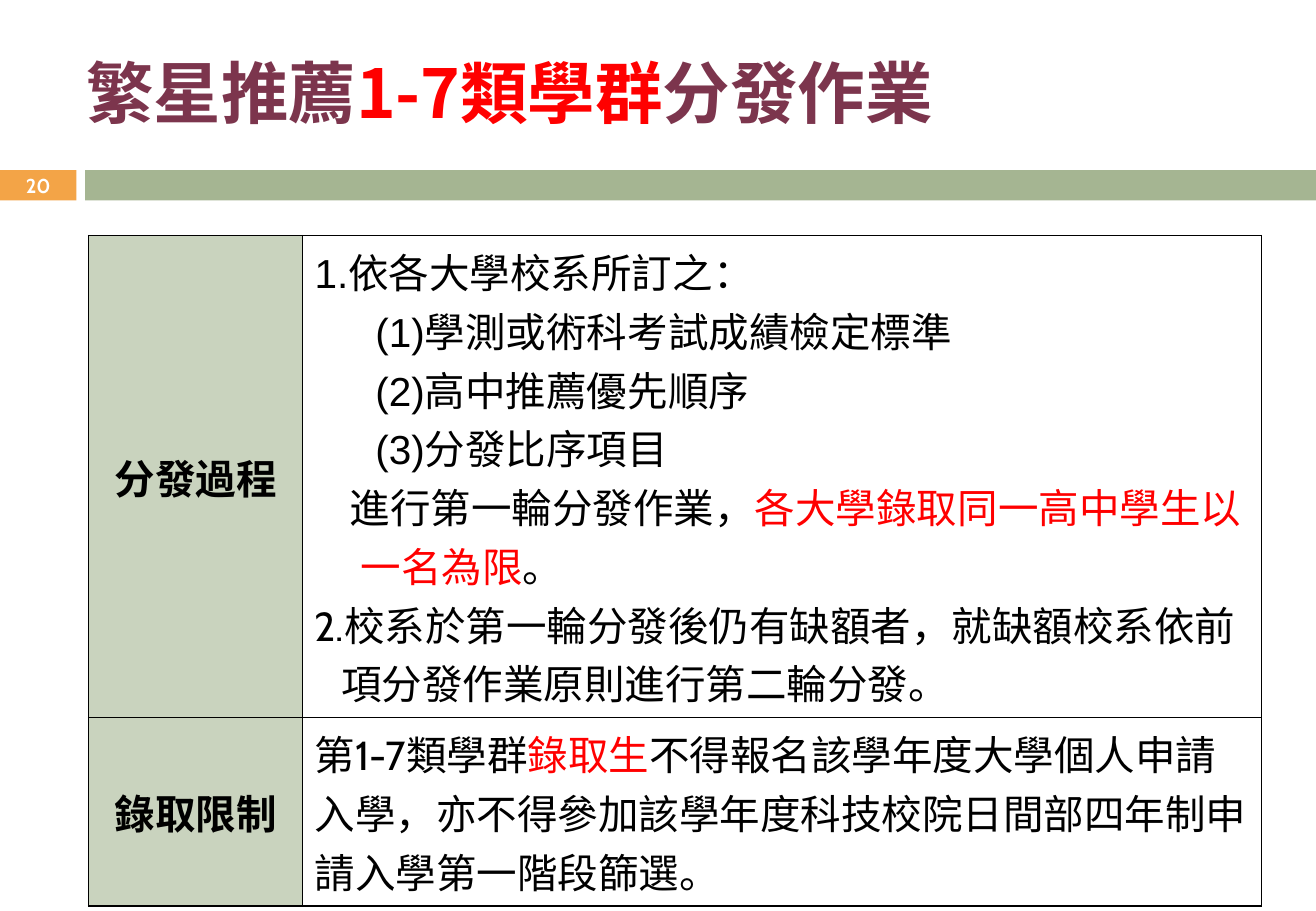
from pptx import Presentation
from pptx.dml.color import RGBColor
from pptx.enum.shapes import MSO_SHAPE
from pptx.enum.text import MSO_ANCHOR, PP_ALIGN
from pptx.oxml.ns import qn
from pptx.util import Inches, Pt
from lxml import etree

RECTANGLE = MSO_SHAPE.RECTANGLE
MIDDLE, TOP = MSO_ANCHOR.MIDDLE, MSO_ANCHOR.TOP
CENTER, LEFT = PP_ALIGN.CENTER, PP_ALIGN.LEFT
TITLE_ONLY = 5

THEME = {
    "title": "7C354D", "alert": "FF0000", "text": "000000", "white": "FFFFFF",
    "orange": "F3A447", "green": "A5B592", "label": "C9D3BE",
    "title_size": 40, "body_size": 24, "number_size": 11.9,
    "cjk": "Noto Sans CJK SC", "arial": "Arial", "cabin": "Cabin",
    "border": 1,
}

# A span is (text, colour name)
TITLE = [("繁星推薦", "title"), ("1-7類學群", "alert"), ("分發作業", "title")]
PAGE_NUMBER = "20"

# A paragraph is (spans, font, level, left margin, first-line indent)
PROCESS = [
    ([("1.依各大學校系所訂之：", "text")], "arial", 0, 0.38, -0.38),
    ([("(1)學測或術科考試成績檢定標準", "text")], "arial", 1, 0.88, -0.38),
    ([("(2)高中推薦優先順序", "text")], "arial", 1, 0.88, -0.38),
    ([("(3)分發比序項目", "text")], "arial", 1, 0.88, -0.38),
    ([("進行第一輪分發作業，", "text"),
      ("各大學錄取同一高中學生以一名為限", "alert"),
      ("。", "text")], "arial", 0, 0.38, -0.09),
    ([("2.校系於第一輪分發後仍有缺額者，就缺額校系依前", "text")],
     "cabin", 0, 0.38, -0.38),
    ([("項分發作業原則進行第二輪分發。", "text")], "cabin", 0, 0.22, 0),
]
LIMITS = [
    ([("第1-7類學群", "text"), ("錄取生", "alert"),
      ("不得報名該學年度大學個人申請入學，亦不得參加該學年度"
       "科技校院日間部四年制申請入學第一階段篩選。", "text")], "cabin", 0, 0, 0),
]
ROWS = [("分發過程", PROCESS, 3.96), ("錄取限制", LIMITS, 1.55)]

SLIDE_SIZE = (10.83, 7.5)
TITLE_BOX = (0.61, 0.36, 9.76, 0.79)
NUMBER_BOX = (0, 1.39, 0.63, 0.27)
BARS = [((0, 1.4, 0.63, 0.25), "orange"), ((0.7, 1.4, 10.13, 0.25), "green")]
TABLE_LEFT, TABLE_TOP = 0.73, 1.94
COLUMN_WIDTHS = (1.76, 7.89)


def colour(name):
    return RGBColor.from_string(THEME[name])


def inches(values):
    return [Inches(value) for value in values]


def write_spans(para, spans, font, size, bold=False):
    for text, colour_name in spans:
        span = para.add_run()
        span.text = text
        settings = {"name": THEME[font], "size": Pt(THEME[size]), "bold": bold}
        for key, value in settings.items():
            setattr(span.font, key, value)
        span.font.color.rgb = colour(colour_name)
        east_asian = etree.Element(qn("a:ea"), typeface=THEME["cjk"])
        span.font._element.find(qn("a:latin")).addnext(east_asian)


def format_frame(frame, anchor):
    settings = {"word_wrap": True, "vertical_anchor": anchor,
                "margin_top": 0, "margin_bottom": 0}
    for key, value in settings.items():
        setattr(frame, key, value)


def add_bars(page):
    for position, fill in BARS:
        bar = page.shapes.add_shape(RECTANGLE, *inches(position))
        bar.shadow.inherit = False
        bar.fill.solid()
        bar.fill.fore_color.rgb = colour(fill)
        bar.line.fill.background()


def add_title(page):
    title = page.shapes.title
    title.left, title.top, title.width, title.height = inches(TITLE_BOX)
    format_frame(title.text_frame, MIDDLE)
    para = title.text_frame.paragraphs[0]
    para.alignment = LEFT
    write_spans(para, TITLE, "cjk", "title_size", bold=True)


def add_page_number(page):
    box = page.shapes.add_textbox(*inches(NUMBER_BOX))
    format_frame(box.text_frame, MIDDLE)
    para = box.text_frame.paragraphs[0]
    para.alignment = CENTER
    write_spans(para, [(PAGE_NUMBER, "white")], "cabin", "number_size", bold=True)


def style_cell(cell, fill, anchor):
    properties = cell._tc.get_or_add_tcPr()
    for side in ("lnL", "lnR", "lnT", "lnB"):
        line = etree.SubElement(properties, qn(f"a:{side}"),
                                w=str(Pt(THEME["border"])))
        solid = etree.SubElement(line, qn("a:solidFill"))
        etree.SubElement(solid, qn("a:srgbClr"), val=THEME["text"])
    cell.fill.solid()
    cell.fill.fore_color.rgb = colour(fill)
    cell.vertical_anchor = anchor


def write_paragraphs(frame, paragraphs):
    for index, (spans, font, level, margin, indent) in enumerate(paragraphs):
        para = frame.add_paragraph() if index else frame.paragraphs[0]
        para.level = level
        properties = para._p.get_or_add_pPr()
        properties.set("marL", str(Inches(margin)))
        properties.set("indent", str(Inches(indent)))
        write_spans(para, spans, font, "body_size")


def add_rules_table(page):
    size = (sum(COLUMN_WIDTHS), sum(height for _, _, height in ROWS))
    frame = page.shapes.add_table(len(ROWS), len(COLUMN_WIDTHS),
                                  *inches((TABLE_LEFT, TABLE_TOP, *size)))
    table = frame.table
    table.first_row = table.horz_banding = False
    for column, width in zip(table.columns, COLUMN_WIDTHS):
        column.width = Inches(width)
    for row, (label, paragraphs, height) in zip(table.rows, ROWS):
        row.height = Inches(height)
        label_cell, rule_cell = row.cells
        style_cell(label_cell, "label", MIDDLE)
        para = label_cell.text_frame.paragraphs[0]
        para.alignment = CENTER
        write_spans(para, [(label, "text")], "arial", "body_size", bold=True)
        style_cell(rule_cell, "white", TOP)
        write_paragraphs(rule_cell.text_frame, paragraphs)


def main():
    deck = Presentation()
    deck.slide_width, deck.slide_height = inches(SLIDE_SIZE)
    page = deck.slides.add_slide(deck.slide_layouts[TITLE_ONLY])
    add_bars(page)
    add_title(page)
    add_rules_table(page)
    add_page_number(page)
    deck.save("out.pptx")


if __name__ == "__main__":
    main()
